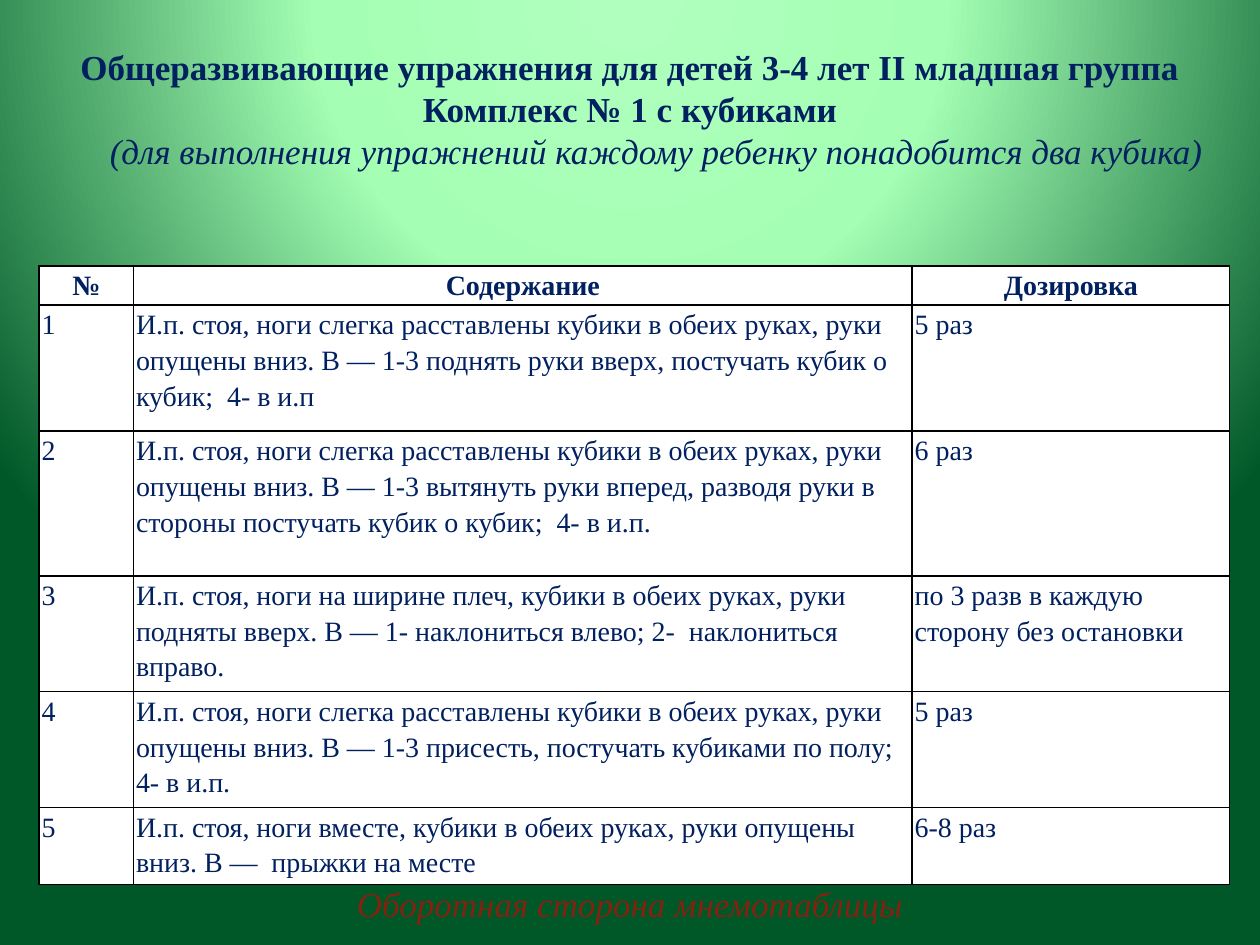
from pptx import Presentation
from pptx import util as u
from pptx.dml.color import RGBColor
from pptx.enum import text
from pptx.oxml import parse_xml
from pptx.oxml.ns import nsdecls, qn

# Content
TITLE = [  # text, bold, italic, left indent
    ("Общеразвивающие упражнения для детей 3-4 лет II младшая группа", True, False, 0),
    ("Комплекс № 1 с кубиками", True, False, 0),
    ("(для выполнения упражнений каждому ребенку понадобится два кубика)", False, True, 0.42),
]
HEADER = ("№", "Содержание", "Дозировка")
EXERCISES = [
    ("И.п. стоя, ноги слегка расставлены кубики в обеих руках, руки опущены вниз. "
     "В — 1-3 поднять руки вверх, постучать кубик о кубик;  4- в и.п", "5 раз"),
    ("И.п. стоя, ноги слегка расставлены кубики в обеих руках, руки опущены вниз. "
     "В — 1-3 вытянуть руки вперед, разводя руки в стороны постучать кубик о кубик;  4- в и.п.",
     "6 раз"),
    ("И.п. стоя, ноги на ширине плеч, кубики в обеих руках, руки подняты вверх. "
     "В — 1- наклониться влево; 2-  наклониться вправо.",
     "по 3 разв в каждую сторону без остановки"),
    ("И.п. стоя, ноги слегка расставлены кубики в обеих руках, руки опущены вниз. "
     "В — 1-3 присесть, постучать кубиками по полу;  4- в и.п.", "5 раз"),
    ("И.п. стоя, ноги вместе, кубики в обеих руках, руки опущены вниз. "
     "В —  прыжки на месте", "6-8 раз"),
]
FOOTER = "Оборотная сторона мнемотаблицы"

THEME = {
    "font": "Times New Roman", "title": 20, "body": 16,
    "ink": "002060", "accent": "862110", "cell": "FFFFFF", "border": "000000",
    "gradient": [(0, "B1FFBE"), (40, "A4FFB4"), (100, "005728")],
}
COLS = (0.75, 6.18, 2.52)
ROWS = (0.31, 1, 1.15, 0.92, 0.92, 0.61)


def set_background(s):
    stops = "".join(f'<a:gs pos="{pos * 1000}"><a:srgbClr val="{c}"/></a:gs>'
                    for pos, c in THEME["gradient"])
    bg = parse_xml(
        f'<p:bg {nsdecls("p", "a")}><p:bgPr><a:gradFill rotWithShape="1">'
        f'<a:gsLst>{stops}</a:gsLst><a:path path="circle">'
        '<a:fillToRect l="50000" t="-80000" r="50000" b="180000"/></a:path>'
        '</a:gradFill><a:effectLst/></p:bgPr></p:bg>')
    s.element.find(qn("p:cSld")).insert(0, bg)


def style(p, size, color="ink", bold=False, italic=False, align=text.PP_ALIGN.CENTER):
    p.alignment = align
    f = p.font
    f.name, f.size, f.bold, f.italic = THEME["font"], u.Pt(THEME[size]), bold, italic
    f.color.rgb = RGBColor.from_string(THEME[color])


def set_frame(tf):
    tf.word_wrap = True
    tf.auto_size = text.MSO_AUTO_SIZE.NONE
    tf.vertical_anchor = text.MSO_ANCHOR.MIDDLE


def fill_cell(cell, value, header, align):
    cell.margin_left = cell.margin_right = u.Inches(0.02)
    cell.margin_top = cell.margin_bottom = 0
    cell.fill.solid()
    cell.fill.fore_color.rgb = RGBColor.from_string(THEME["cell"])
    for i, side in enumerate("LRTB"):
        line = parse_xml(
            f'<a:ln{side} {nsdecls("a")} w="{u.Pt(1)}"><a:solidFill>'
            f'<a:srgbClr val="{THEME["border"]}"/></a:solidFill></a:ln{side}>')
        cell._tc.get_or_add_tcPr().insert(i, line)
    p = cell.text_frame.paragraphs[0]
    p.text = value
    p.line_spacing = 1.15
    style(p, "body", bold=header, align=align)


def main():
    prs = Presentation()
    prs.slide_width, prs.slide_height = u.Inches(10), u.Inches(7.5)
    s = prs.slides.add_slide(prs.slide_layouts[5])
    set_background(s)

    # Title
    title = s.shapes.title
    title.left, title.top = 0, u.Inches(0.31)
    title.width, title.height = prs.slide_width, u.Inches(1.11)
    tf = title.text_frame
    tf.text = "\n".join(line[0] for line in TITLE)
    set_frame(tf)
    for p, (_, bold, italic, indent) in zip(tf.paragraphs, TITLE):
        style(p, "title", bold=bold, italic=italic)
        p._p.get_or_add_pPr().set("marL", str(u.Inches(indent)))

    # Exercise table
    rows = [HEADER] + [(str(n), *row) for n, row in enumerate(EXERCISES, 1)]
    table = s.shapes.add_table(len(rows), len(COLS), u.Inches(0.31), u.Inches(2.11),
                               u.Inches(sum(COLS)), u.Inches(sum(ROWS))).table
    for col, width in zip(table.columns, COLS):
        col.width = u.Inches(width)
    for r, (row, height) in enumerate(zip(rows, ROWS)):
        table.rows[r].height = u.Inches(height)
        align = text.PP_ALIGN.LEFT if r else text.PP_ALIGN.CENTER
        for c, value in enumerate(row):
            fill_cell(table.cell(r, c), value, r == 0, align)

    # Footer caption
    sp = s.shapes.add_textbox(0, u.Inches(6.95), prs.slide_width, u.Inches(0.44))
    set_frame(sp.text_frame)
    p = sp.text_frame.paragraphs[0]
    p.text = FOOTER
    style(p, "title", "accent", italic=True)

    prs.save("out.pptx")


if __name__ == "__main__":
    main()
